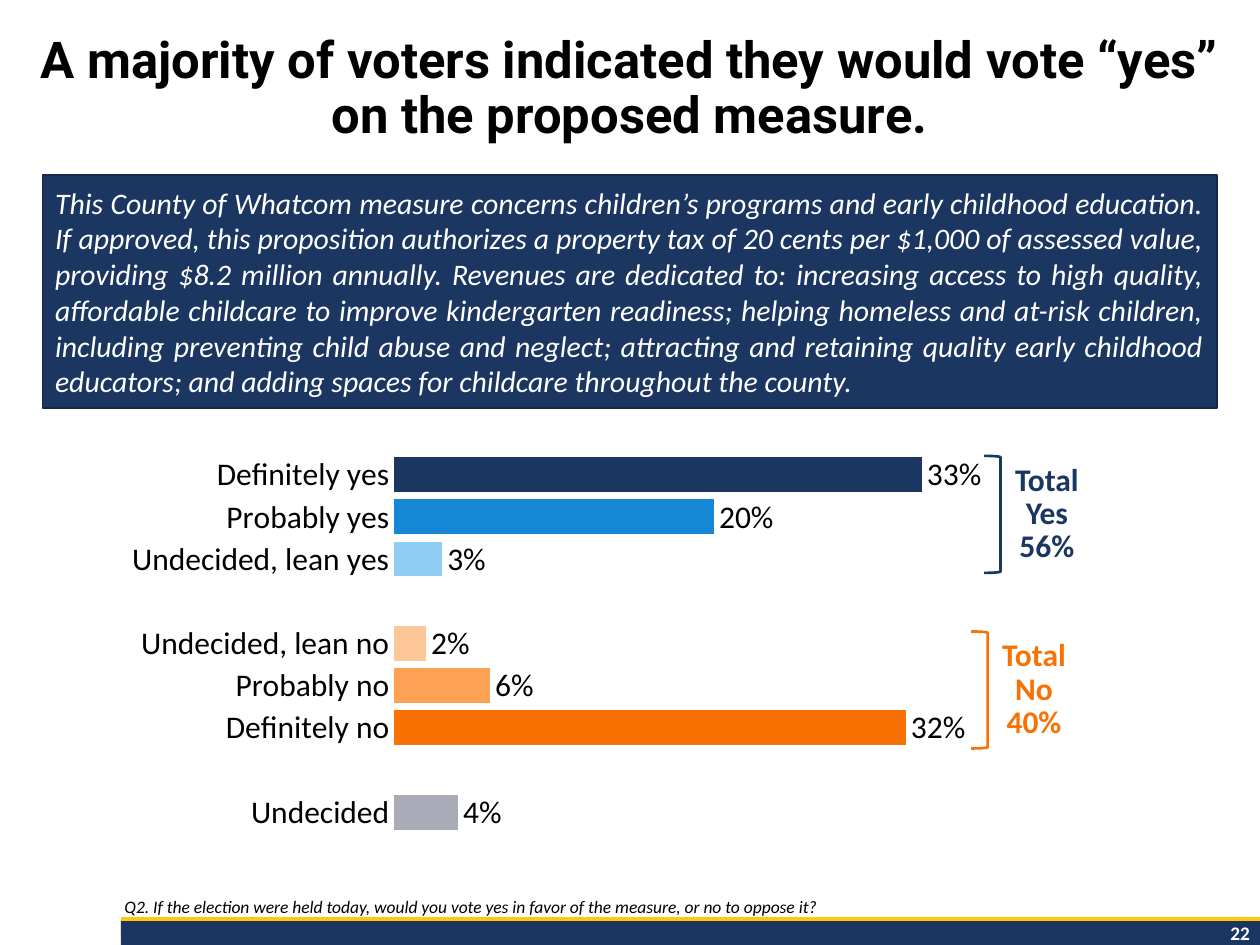
import pptx
import pptx.chart.data
import pptx.dml.color
import pptx.enum.chart
import pptx.enum.shapes
import pptx.enum.text
import pptx.oxml
import pptx.oxml.ns
import pptx.util

Cm, Pt = pptx.util.Cm, pptx.util.Pt
ALIGN = pptx.enum.text.PP_ALIGN
ANCHOR = pptx.enum.text.MSO_ANCHOR
SHAPE = pptx.enum.shapes.MSO_SHAPE

HUES = {
    "black": "000000", "white": "FFFFFF", "gold": "FCCA09", "foot": "1B3661",
    "navy": "1B3660", "edge": "142847", "blue": "1587D4", "sky": "91CCF4",
    "peach": "FEC799", "light": "FDA155", "orange": "F97103", "gray": "A9ABB8",
}
BARS = [
    ("Definitely yes", 0.33, "navy"),
    ("Probably yes", 0.20, "blue"),
    ("Undecided, lean yes", 0.03, "sky"),
    ("", None, None),
    ("Undecided, lean no", 0.02, "peach"),
    ("Probably no", 0.06, "light"),
    ("Definitely no", 0.32, "orange"),
    ("", None, None),
    ("Undecided", 0.04, "gray"),
]
PLOT = {"x": 0.312, "y": 0.035, "w": 0.658, "h": 0.879}
TITLE = "A majority of voters indicated they would vote “yes” on the proposed measure."
MEASURE = (
    "This County of Whatcom measure concerns children’s programs and early "
    "childhood education.\vIf approved, this proposition authorizes a property tax "
    "of 20 cents per $1,000 of assessed value, providing $8.2 million annually. "
    "Revenues are dedicated to: increasing access to high quality, affordable "
    "childcare to improve kindergarten readiness; helping homeless and at-risk "
    "children, including preventing child abuse and neglect; attracting and "
    "retaining quality early childhood educators; and adding spaces for childcare "
    "throughout the county."
)
QUERY = (
    "Q2. If the election were held today, would you vote yes in favor of the "
    "measure, or no to oppose it?"
)


def rgb(hue):
    return pptx.dml.color.RGBColor.from_string(HUES[hue])


def style(font, size, hue="black", face="Calibri", bold=False, slant=False):
    font.size, font.name = Pt(size), face
    font.bold, font.italic = bold, slant
    font.color.rgb = rgb(hue)


def write(shape, text, align=ALIGN.LEFT, anchor=ANCHOR.TOP, lead=None, **look):
    """Put one paragraph in a shape; look is passed on to style."""
    frame = shape.text_frame
    frame.word_wrap = True
    frame.vertical_anchor = anchor
    frame.text = text
    para = frame.paragraphs[0]
    para.alignment = align
    if lead:
        para.line_spacing = lead
    for run in para.runs:
        style(run.font, **look)


def add_text(slide, spot, text, **look):
    write(slide.shapes.add_textbox(*map(Cm, spot)), text, **look)


def add_shape(slide, kind, spot, fill=None, line=None, width=1):
    shape = slide.shapes.add_shape(kind, *map(Cm, spot))
    shape.shadow.inherit = False
    if fill:
        shape.fill.solid()
        shape.fill.fore_color.rgb = rgb(fill)
    else:
        shape.fill.background()
    if line:
        shape.line.color.rgb = rgb(line)
        shape.line.width = Pt(width)
    else:
        shape.line.fill.background()
    return shape


def fix_plot(chart):
    """Pin the inner plot area to the fractions in PLOT."""
    area = chart.element.find(".//" + pptx.oxml.ns.qn("c:plotArea"))
    for old in area.findall(pptx.oxml.ns.qn("c:layout")):
        area.remove(old)
    modes = "".join(f'<c:{k}Mode val="edge"/>' for k in "xy")
    sizes = "".join(f'<c:{k} val="{v}"/>' for k, v in PLOT.items())
    area.insert(0, pptx.oxml.parse_xml(
        f'<c:layout {pptx.oxml.ns.nsdecls("c")}><c:manualLayout>'
        f'<c:layoutTarget val="inner"/>{modes}{sizes}'
        '</c:manualLayout></c:layout>'))


def add_bars(slide, spot):
    data = pptx.chart.data.CategoryChartData(number_format="0%")
    data.categories = [name for name, _, _ in BARS]
    data.add_series("Series 1", [value for _, value, _ in BARS])
    kind = pptx.enum.chart.XL_CHART_TYPE.BAR_CLUSTERED
    chart = slide.shapes.add_chart(kind, *map(Cm, spot), data).chart
    chart.has_legend = chart.has_title = False
    style(chart.font, 10)
    fix_plot(chart)

    cats = chart.category_axis
    cats.reverse_order = True
    cats.major_tick_mark = pptx.enum.chart.XL_TICK_MARK.NONE
    cats.format.line.fill.background()
    style(cats.tick_labels.font, 18)
    vals = chart.value_axis
    vals.minimum_scale, vals.maximum_scale, vals.major_unit = 0, 0.45, 0.15
    vals.has_major_gridlines = vals.visible = False

    plot = chart.plots[0]
    plot.gap_width, plot.vary_by_categories = 21, False
    series = plot.series[0]
    series.format.fill.solid()
    series.format.fill.fore_color.rgb = rgb("navy")
    for spot, (_, _, hue) in enumerate(BARS):
        if hue and hue != "navy":
            fill = series.points[spot].format.fill
            fill.solid()
            fill.fore_color.rgb = rgb(hue)
    labels = series.data_labels
    labels.show_value = True
    labels.number_format, labels.number_format_is_linked = "0%", False
    labels.position = pptx.enum.chart.XL_LABEL_POSITION.OUTSIDE_END
    style(labels.font, 18)


def add_total(slide, left, top, text, hue):
    """A bracket with its total to the right."""
    add_shape(slide, SHAPE.RIGHT_BRACKET, (left, top, 0.33, 2.36), line=hue, width=1.5)
    add_text(slide, (left + 0.2, top + 0.03, 2.13, 2.29), text, align=ALIGN.CENTER,
             anchor=ANCHOR.MIDDLE, lead=Pt(19), size=18, hue=hue, bold=True)


def main():
    deck = pptx.Presentation()
    deck.slide_width, deck.slide_height = Cm(25.4), Cm(19.05)
    slide = deck.slides.add_slide(deck.slide_layouts[6])

    add_shape(slide, SHAPE.RECTANGLE, (2.44, 18.49, 22.96, 0.41), "gold")
    add_shape(slide, SHAPE.RECTANGLE, (2.44, 18.57, 22.96, 0.48), "foot")
    add_text(slide, (21.69, 18.44, 3.76, 0.74), "22", align=ALIGN.RIGHT,
             size=11, hue="white", bold=True)

    add_bars(slide, (1.07, 8.84, 22.05, 8.71))
    add_total(slide, 19.84, 9.19, "Total Yes\v56%", "navy")
    add_total(slide, 19.58, 12.73, "Total No\v40%", "orange")

    add_text(slide, (2.26, 17.25, 23.09, 1.37), QUERY, anchor=ANCHOR.BOTTOM,
             lead=0.9, size=10, slant=True)
    box = add_shape(slide, SHAPE.RECTANGLE, (0.86, 3.53, 23.67, 4.7), "navy", "edge")
    write(box, MEASURE, align=ALIGN.JUSTIFY, anchor=ANCHOR.MIDDLE,
          size=17, hue="white", slant=True)
    add_text(slide, (0, 0.58, 25.4, 3.1), TITLE, align=ALIGN.CENTER, lead=0.9,
             size=29, face="Roboto", bold=True)
    deck.save("out.pptx")


if __name__ == "__main__":
    main()
